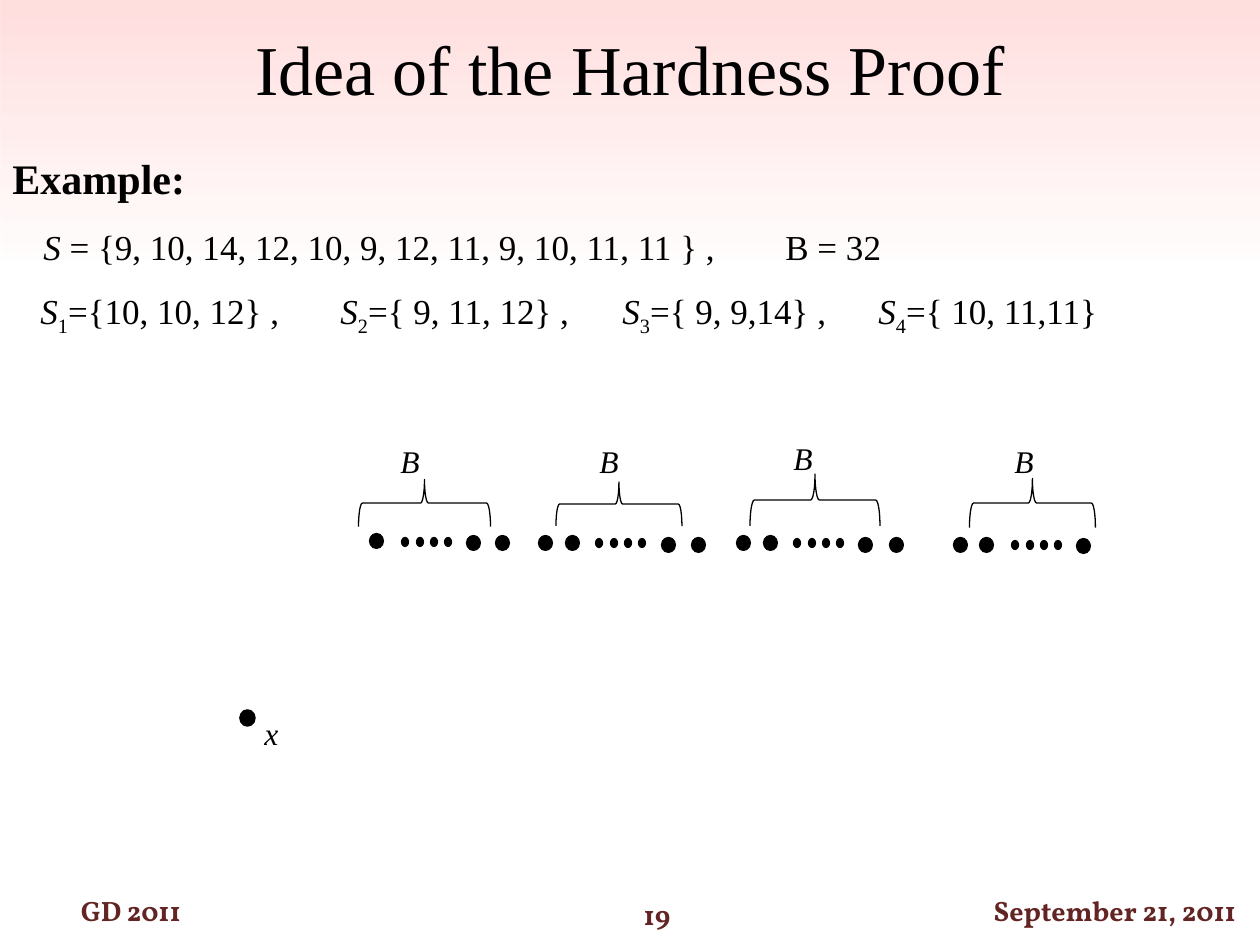
from lxml import etree
from pptx import Presentation, util as u
from pptx.dml.color import RGBColor
from pptx.enum import shapes, text
from pptx.oxml import parse_xml
from pptx.oxml.ns import nsdecls, qn

PX = u.Inches(1) / 126
BLACK = RGBColor(0x00, 0x00, 0x00)
MAROON = RGBColor(0x63, 0x25, 0x23)
SERIF = "Times New Roman"

prs = Presentation()
prs.slide_width, prs.slide_height = u.Inches(10), u.Inches(7.5)
slide = prs.slides.add_slide(prs.slide_layouts[6])


def add_shape(kind, box, fill=None, line_width=None):
    shape = slide.shapes.add_shape(kind, *[round(v * PX) for v in box])
    shape.shadow.inherit = False
    if fill is None:
        shape.fill.background()
    else:
        shape.fill.solid()
        shape.fill.fore_color.rgb = fill
    if line_width is None:
        shape.line.fill.background()
    else:
        shape.line.color.rgb = BLACK
        shape.line.width = u.Pt(line_width)
    return shape


def add_text(box, parts, size, bold=False, align=text.PP_ALIGN.LEFT, tabs=()):
    """parts holds (wording, style); style is "", "italic" or "sub"."""
    frame = slide.shapes.add_textbox(*[round(v * PX) for v in box]).text_frame
    frame.word_wrap = True
    paragraph = frame.paragraphs[0]
    paragraph.alignment = align
    if tabs:
        tab_list = etree.SubElement(paragraph._p.get_or_add_pPr(), qn("a:tabLst"))
        for tab in tabs:
            etree.SubElement(tab_list, qn("a:tab"), pos=str(round(tab * PX)), algn="l")
    for wording, style in parts:
        run = paragraph.add_run()
        run.text = wording
        run.font.name, run.font.size = SERIF, u.Pt(size)
        run.font.bold, run.font.italic = bold, style == "italic"
        run.font.color.rgb = BLACK
        if style == "sub":
            run._r.get_or_add_rPr().set("baseline", "-25000")


# Background wash: clear at the bottom, pale red at the top
wash = add_shape(shapes.MSO_SHAPE.RECTANGLE, (1, 0, 1260, 883))
stops = "".join(
    f'<a:gs pos="{pos}000"><a:srgbClr val="{color}"><a:alpha val="{alpha}000"/></a:srgbClr></a:gs>'
    for pos, color, alpha in [(0, "FF0000", 0), (45, "FF0000", 0),
                              (70, "FF0300", 0), (100, "FF0000", 13)])
gradient = parse_xml(f'<a:gradFill {nsdecls("a")} rotWithShape="1"><a:gsLst>{stops}</a:gsLst>'
                     '<a:lin ang="16200000" scaled="0"/></a:gradFill>')
no_fill = wash._element.spPr.find(qn("a:noFill"))
no_fill.getparent().replace(no_fill, gradient)

# Footer
for wording, box in [("GD 2011", (1, 888, 260, 44)),
                     ("September 21, 2011", (970, 888, 290, 44)),
                     ("19", (527, 892, 260, 44))]:
    footer = add_shape(shapes.MSO_SHAPE.ROUNDED_RECTANGLE, box).text_frame
    footer.text = wording
    footer.vertical_anchor = text.MSO_ANCHOR.MIDDLE
    footer.paragraphs[0].alignment = text.PP_ALIGN.CENTER
    font = footer.paragraphs[0].runs[0].font
    font.name, font.size, font.bold = "Vollkorn", u.Pt(16), True
    font.color.rgb = MAROON

# Title and example
add_text((0, 19, 1260, 97), [("Idea of the Hardness Proof", "")], 40,
         align=text.PP_ALIGN.CENTER)
add_text((0, 146, 210, 63), [("Example:", "")], 24, bold=True)
add_text((31, 219, 869, 55),
         [("S", "italic"),
          (" = {9, 10, 14, 12, 10, 9, 12, 11, 9, 10, 11, 11 } ,\tB = 32", "")],
         20, tabs=[742])

subsets = ["={10, 10, 12} ,\t", "={ 9, 11, 12} ,\t", "={ 9, 9,14} ,\t", "={ 10, 11,11}"]
subset_parts = []
for number, members in enumerate(subsets, 1):
    subset_parts += [("S", "italic"), (str(number), "sub"), (members, "")]
add_text((28, 283, 1226, 97), subset_parts, 20, tabs=[300, 582, 838])

# Point groups: large points (x, y), then start of the four small points
groups = [
    ([(370, 534), (467, 536), (496, 536)], (402, 538)),
    ([(539, 536), (566, 536), (662, 538), (692, 538)], (596, 539)),
    ([(737, 536), (764, 536), (859, 538), (890, 538)], (794, 539)),
    ([(954, 538), (980, 538), (1077, 539)], (1012, 541)),
]
for large_points, (small_x, small_y) in groups:
    points = [(x, y, 13, 14) for x, y in large_points]
    points += [(small_x + step, small_y, 6, 8) for step in (0, 15, 29, 43)]
    for point in points:
        add_shape(shapes.MSO_SHAPE.OVAL, point, BLACK, 1.25)

# Braces, each with its sum B
for brace_box, label_x, label_y in [((401, 437, 47, 132), 388, 436),
                                    ((597, 441, 44, 126), 587, 436),
                                    ((789, 435, 52, 130), 781, 433),
                                    ((1008, 440, 49, 126), 1002, 436)]:
    brace = add_shape(shapes.MSO_SHAPE.RIGHT_BRACE, brace_box, line_width=0.75)
    brace.rotation = 270
    add_text((label_x, label_y, 47, 50), [("B", "italic")], 18)

# Point x
add_shape(shapes.MSO_SHAPE.OVAL, (241, 711, 13, 14), BLACK, 2)
add_text((252, 708, 39, 50), [("x", "italic")], 18)

prs.save("out.pptx")
